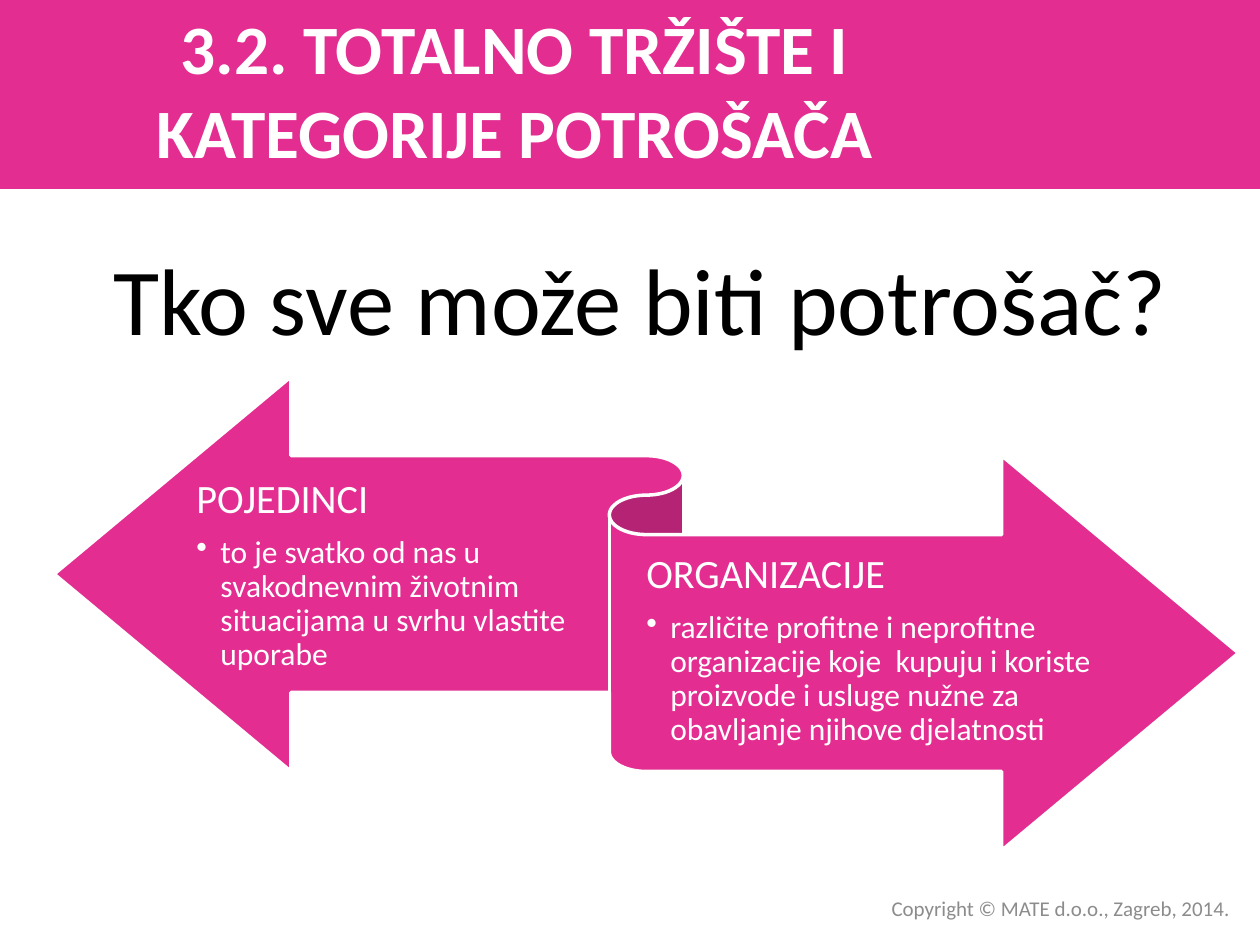
from dataclasses import dataclass

from lxml import etree
from pptx import Presentation
from pptx.dml.color import RGBColor
from pptx.enum import shapes, text
from pptx.oxml.ns import qn
from pptx import util as u

WIDTH, HEIGHT = 10, 7.5
PINK, WHITE, BLACK, GREY = "E32D91", "FFFFFF", "000000", "8C8C8C"
FONT = "Calibri"
LEFT, CENTER, RIGHT = text.PP_ALIGN.LEFT, text.PP_ALIGN.CENTER, text.PP_ALIGN.RIGHT


@dataclass
class Box:
    """A place on the slide, in shares of its width and height."""
    left: float
    top: float
    width: float
    height: float

    def emu(self) -> tuple:
        return (u.Inches(self.left * WIDTH), u.Inches(self.top * HEIGHT),
                u.Inches(self.width * WIDTH), u.Inches(self.height * HEIGHT))


@dataclass
class Consumer:
    box: Box
    heading: str
    description: str


def rgb(hex_colour: str) -> RGBColor:
    return RGBColor.from_string(hex_colour)


def add_figure(slide, kind, box: Box, fill: str, line: str = ""):
    figure = slide.shapes.add_shape(kind, *box.emu())
    figure.shadow.inherit = False
    figure.fill.solid()
    figure.fill.fore_color.rgb = rgb(fill)
    if line:
        figure.line.color.rgb = rgb(line)
        figure.line.width = u.Pt(2)
    else:
        figure.line.fill.background()
    return figure


def add_bullet(paragraph, indent: float) -> None:
    properties = paragraph._p.get_or_add_pPr()
    properties.set("marL", str(u.Inches(indent)))
    properties.set("indent", str(-u.Inches(indent)))
    etree.SubElement(properties, qn("a:buChar"), char="•")


def write(paragraph, words: str, *, size: float, colour: str, align=LEFT,
          bold: bool = False, bullet: bool = False, spacing=None, after=None) -> None:
    paragraph.alignment = align
    if spacing:
        paragraph.line_spacing = spacing
    if after:
        paragraph.space_after = u.Pt(after)
    if bullet:
        add_bullet(paragraph, 0.19)
    run = paragraph.add_run()
    run.text = words
    run.font.name, run.font.size, run.font.bold = FONT, u.Pt(size), bold
    run.font.color.rgb = rgb(colour)


def add_frame(slide, box: Box, *, wrap: bool = True, anchor=text.MSO_ANCHOR.MIDDLE):
    frame = slide.shapes.add_textbox(*box.emu()).text_frame
    frame.word_wrap = wrap
    frame.vertical_anchor = anchor
    return frame


def add_consumer(slide, consumer: Consumer) -> None:
    frame = add_frame(slide, consumer.box)
    frame.margin_left = frame.margin_right = 0
    frame.margin_top, frame.margin_bottom = u.Inches(0.09), u.Inches(0.1)
    write(frame.paragraphs[0], consumer.heading, size=23, colour=WHITE,
          spacing=0.9, after=8)
    write(frame.add_paragraph(), consumer.description, size=18, colour=WHITE,
          bullet=True, spacing=0.9, after=2.7)


CONSUMERS = [
    Consumer(Box(0.156, 3.65 / HEIGHT, 0.31, 1.84 / HEIGHT), "POJEDINCI",
             "to je svatko od nas u svakodnevnim životnim situacijama "
             "u svrhu vlastite uporabe"),
    Consumer(Box(0.513, 4.25 / HEIGHT, 0.366, 1.84 / HEIGHT), "ORGANIZACIJE",
             "različite profitne i neprofitne organizacije koje  kupuju i koriste "
             "proizvode i usluge nužne za obavljanje njihove djelatnosti"),
]


def main() -> None:
    deck = Presentation()
    deck.slide_width, deck.slide_height = u.Inches(WIDTH), u.Inches(HEIGHT)
    slide = deck.slides.add_slide(deck.slide_layouts[5])

    # Header band, with the title brought in front of it
    add_figure(slide, shapes.MSO_SHAPE.RECTANGLE, Box(0, 0, 1, 0.2), PINK)
    title = slide.shapes.title
    title.element.getparent().append(title.element)
    title.left, title.top, title.width, title.height = Box(
        0, 0.08 / HEIGHT, 0.817, 1.25 / HEIGHT).emu()
    heading = title.text_frame
    heading.word_wrap = True
    heading.auto_size = text.MSO_AUTO_SIZE.NONE
    heading.vertical_anchor = text.MSO_ANCHOR.MIDDLE
    write(heading.paragraphs[0], "3.2. TOTALNO TRŽIŠTE I KATEGORIJE POTROŠAČA",
          size=39.6, colour=WHITE, align=CENTER, bold=True)

    # Question
    question = add_frame(slide, Box(0.075, 1.86 / HEIGHT, 0.866, 1.01 / HEIGHT),
                         wrap=False, anchor=text.MSO_ANCHOR.TOP)
    question.auto_size = text.MSO_AUTO_SIZE.SHAPE_TO_FIT_TEXT
    write(question.paragraphs[0], "Tko sve može biti potrošač?",
          size=54, colour=BLACK, align=CENTER)

    # Ribbon with the two kinds of consumer
    add_figure(slide, shapes.MSO_SHAPE.LEFT_RIGHT_RIBBON,
               Box(0.043, 2.99 / HEIGHT, 0.94, 3.76 / HEIGHT), PINK, WHITE)
    for consumer in CONSUMERS:
        add_consumer(slide, consumer)

    # Copyright line
    footer = add_frame(slide, Box(0.469, 7.06 / HEIGHT, 0.517, 0.04))
    write(footer.paragraphs[0], "Copyright © MATE d.o.o., Zagreb, 2014.",
          size=12, colour=GREY, align=RIGHT)

    deck.save("out.pptx")


if __name__ == "__main__":
    main()
